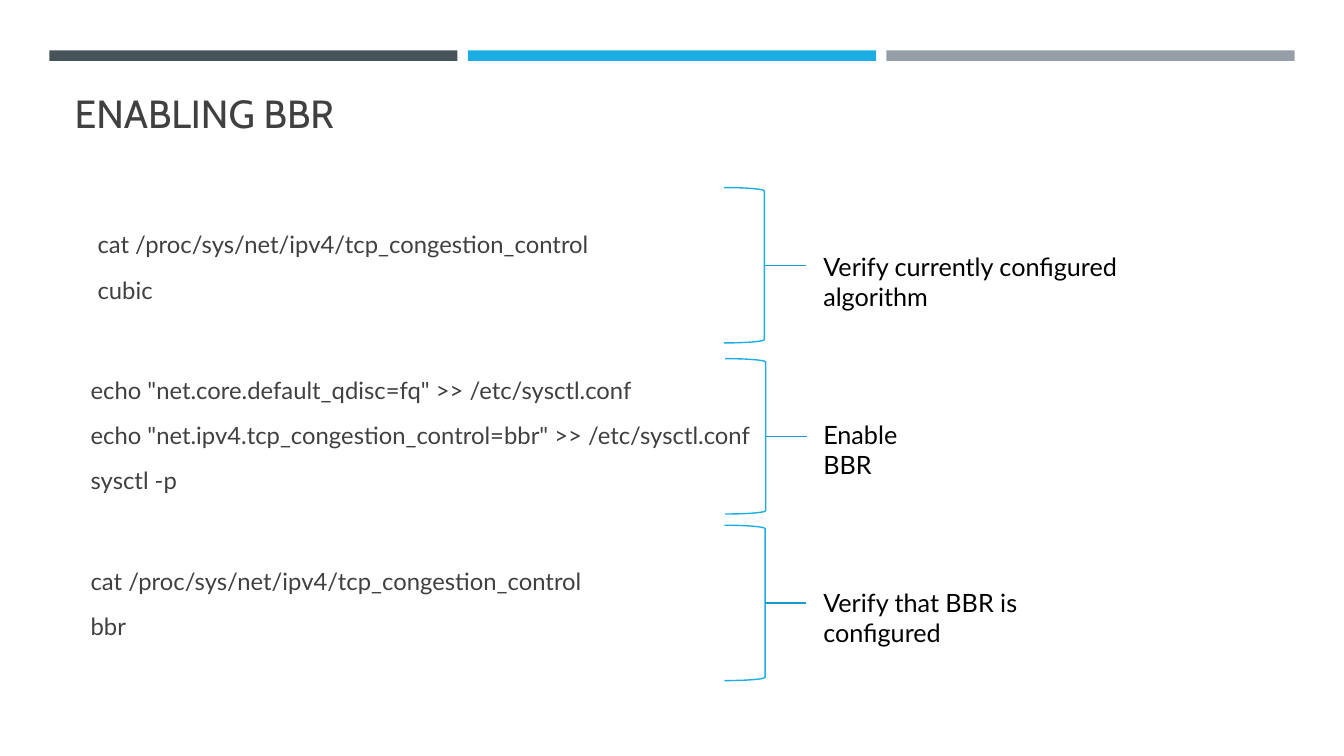
"""Build the slide on enabling BBR."""
import pptx
import pptx.dml.color
import pptx.enum.shapes
import pptx.enum.text
import pptx.oxml.ns
import pptx.util
from lxml import etree

Pt = pptx.util.Pt
RGBColor = pptx.dml.color.RGBColor
Shape = pptx.enum.shapes.MSO_SHAPE
Anchor = pptx.enum.text.MSO_ANCHOR

SLATE = RGBColor(0x46, 0x53, 0x59)
BLUE = RGBColor(0x1C, 0xAD, 0xE4)
DEEP_BLUE = RGBColor(0x18, 0x9C, 0xCE)
GREY = RGBColor(0x96, 0x9F, 0xA7)
DARK = RGBColor(0x40, 0x40, 0x40)
BLACK = RGBColor(0, 0, 0)

STEP_PITCH = 120.1
STEPS = [
    (["cat /proc/sys/net/ipv4/tcp_congestion_control", "cubic"],
     62.6, "Verify currently configured algorithm", 290, (517, 134)),
    (['echo "net.core.default_qdisc=fq" >> /etc/sysctl.conf',
      'echo "net.ipv4.tcp_congestion_control=bbr" >> /etc/sysctl.conf',
      "sysctl -p"],
     57.6, "Enable BBR", 105, (518, 256.2)),
    (["cat /proc/sys/net/ipv4/tcp_congestion_control", "bbr"],
     57.6, "Verify that BBR is configured", 232, (517.5, 375.2)),
]


def add_text(page, box, lines, font, size, color, anchor):
    """Add a wrapped text box and return its paragraphs."""
    frame = page.shapes.add_textbox(*map(Pt, box)).text_frame
    frame.word_wrap = True
    frame.vertical_anchor = anchor
    frame.text = "\n".join(lines)
    for para in frame.paragraphs:
        para.font.name = font
        para.font.size = Pt(size)
        para.font.color.rgb = color
    return frame.paragraphs


def add_header(page, box):
    """Add the three colour bars and the title below them."""
    left, top, width, height = box
    gap = 7.4
    bar_width = (width - 2 * gap) / 3
    for index, color in enumerate((SLATE, BLUE, GREY)):
        bar = page.shapes.add_shape(
            Shape.RECTANGLE, Pt(left + index * (bar_width + gap)), Pt(top),
            Pt(bar_width), Pt(7.5))
        bar.shadow.inherit = False
        bar.fill.solid()
        bar.fill.fore_color.rgb = color
        bar.line.fill.background()
    add_text(page, (left + 11, top + height - 45, 868, 45), ["ENABLING BBR"],
             "Cabin", 28, DARK, Anchor.BOTTOM)


def add_bracket(page, box):
    """Add a right bracket with a short line leaving its middle."""
    left, top, width, height = box
    bracket = page.shapes.add_shape(Shape.RIGHT_BRACKET, *map(Pt, box))
    bracket.shadow.inherit = False
    bracket.fill.background()
    bracket.line.color.rgb = BLUE
    bracket.line.width = Pt(1)
    right, middle = left + width, top + height / 2
    pointer = page.shapes.add_connector(
        pptx.enum.shapes.MSO_CONNECTOR.STRAIGHT,
        Pt(right), Pt(middle), Pt(right + 29.5), Pt(middle))
    pointer.line.color.rgb = DEEP_BLUE
    pointer.line.width = Pt(1)
    etree.SubElement(pointer.element.spPr, pptx.oxml.ns.qn("a:effectLst"))


def add_step(page, box, commands, label, label_width, bracket_corner):
    """Add a group of commands with its bracket and explanation."""
    left, top, width, height = box
    for para in add_text(page, box, commands, "Lato", 17, DARK, Anchor.MIDDLE):
        para.line_spacing = 1.1
        para.space_before = Pt(3.7)
        para.space_after = Pt(6)
    add_bracket(page, (*bracket_corner, 29, 111))
    add_text(page, (581, top + 35.2, label_width, 29), [label],
             "Lato", 18, BLACK, Anchor.TOP)


def main():
    """Build and save the deck."""
    deck = pptx.Presentation()
    deck.slide_width, deck.slide_height = Pt(960), Pt(540)
    page = deck.slides.add_slide(deck.slide_layouts[6])
    add_header(page, (35.2, 36, 889.6, 64.8))
    for index, (commands, left, label, label_width, corner) in enumerate(STEPS):
        box = (left, 140.4 + index * STEP_PITCH, 868, 98.6)
        add_step(page, box, commands, label, label_width, corner)
    deck.save("out.pptx")


if __name__ == "__main__":
    main()
